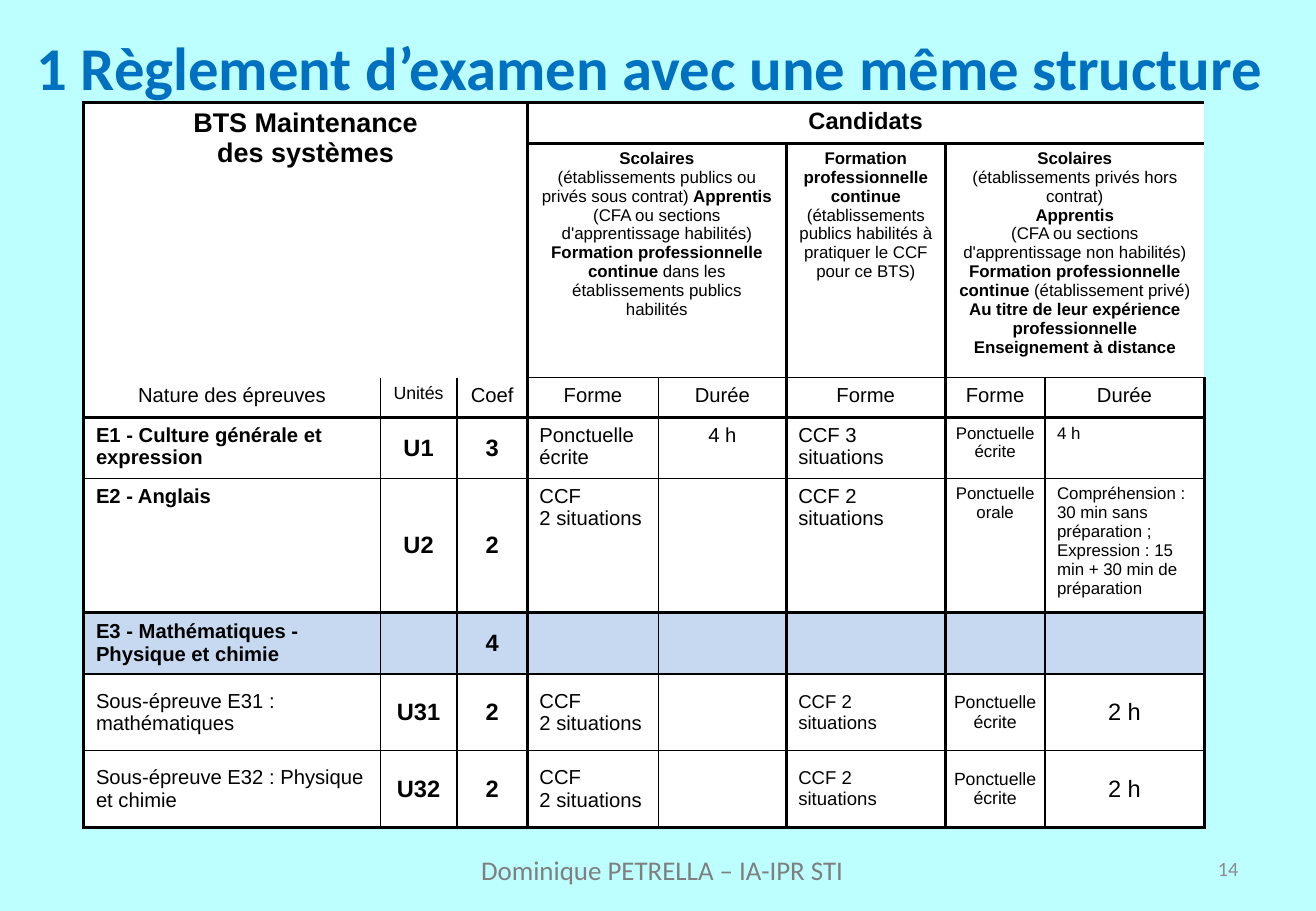
from lxml.etree import SubElement
from pptx import Presentation
from pptx.dml.color import RGBColor
from pptx.enum.text import MSO_ANCHOR as Anchor, MSO_AUTO_SIZE as AutoSize, PP_ALIGN as Align
from pptx.oxml.ns import qn
from pptx.util import Pt

PX = 9144
WHITE, BLUE_ROW, BLACK = "FFFFFF", "C6D9F1", "000000"
ALIGNS = {"l": Align.LEFT, "c": Align.CENTER, "r": Align.RIGHT}
ANCHORS = {"t": Anchor.TOP, "m": Anchor.MIDDLE}

COLUMNS = [244, 63, 58, 108, 105, 131, 82, 131]
ROWS = [34, 193, 33, 50, 110, 51, 63, 63]
MERGES = [(0, 0, 1, 2), (0, 3, 0, 7), (1, 3, 1, 4), (1, 6, 1, 7)]
THICK_COLUMN_EDGES = {0, 3, 5, 6, 8}
THICK_ROW_EDGES = {0, 1, 3, 5, 8}
HIGHLIGHT_ROW = 5
NARROW_COLUMN = 6

SCHOOLS = ("*Scolaires*\n(établissements publics ou privés sous contrat) *Apprentis*\n"
           "(CFA ou sections d'apprentissage habilités) *Formation professionnelle continue *"
           "dans les établissements publics habilités")
TRAINING = ("*Formation*\n*professionnelle continue*\n"
            "(établissements publics habilités à pratiquer le CCF pour ce BTS)")
PRIVATE = ("*Scolaires*\n(établissements privés hors contrat)\n*Apprentis*\n"
           "(CFA ou sections d'apprentissage non habilités) *Formation professionnelle continue *"
           "(établissement privé) *Au titre de leur expérience professionnelle "
           "Enseignement à distance*")
ORAL = ("Compréhension :\n30 min sans préparation ; Expression : 15 min "
        "+ 30 min de préparation")
TWO_CCF = "CCF\n2 situations"


def sub_exam(name, unit):
    """Return the cells of one E3 sub-exam."""
    return [(name, 12, "l", "m"), (unit, 14, "c", "m"), ("*2*", 14, "c", "m"),
            (TWO_CCF, 12, "l", "m"), None, ("CCF 2 situations", 11, "l", "m"),
            ("Ponctuelle écrite", 10.5, "c", "m"), ("2 h", 14, "c", "m")]


EXAMS = [
    [("*BTS Maintenance*\n*des systèmes*", 16, "c", "t"), None, None,
     ("*Candidats*", 14, "c", "t"), None, None, None, None],
    [None, None, None, (SCHOOLS, 10, "c", "t"), None, (TRAINING, 10, "c", "t"),
     (PRIVATE, 10, "c", "t"), None],
    [(heading, 10.5 if heading == "Unités" else 12, "c", "t") for heading in
     ("Nature des épreuves", "Unités", "Coef", "Forme", "Durée", "Forme", "Forme", "Durée")],
    [("*E1 - Culture générale et expression*", 12, "l", "t"), ("*U1*", 14, "c", "m"),
     ("*3*", 14, "c", "m"), ("Ponctuelle écrite", 12, "l", "t"), ("4 h", 12, "c", "t"),
     ("CCF 3 situations", 12, "l", "t"), ("Ponctuelle écrite", 10, "c", "t"),
     ("4 h", 10, "l", "t")],
    [("*E2 - Anglais*", 12, "l", "t"), ("*U2*", 14, "c", "m"), ("*2*", 14, "c", "m"),
     (TWO_CCF, 12, "l", "t"), None, ("CCF 2 situations", 12, "l", "t"),
     ("Ponctuelle orale", 10, "c", "t"), (ORAL, 10, "l", "t")],
    [("*E3 - Mathématiques - Physique et chimie*", 12, "l", "m"), None,
     ("*4*", 14, "c", "m"), None, None, None, None, None],
    sub_exam("Sous-épreuve E31 :\nmathématiques", "*U31*"),
    sub_exam("Sous-épreuve E32 : Physique et chimie", "*U32*"),
]


def paint(color, value):
    """Set a colour format from a hex string."""
    color.rgb = RGBColor.from_string(value)


def write(frame, text, size=12, align="l", color=BLACK, font="Arial"):
    """Write lines of text, with bold parts between asterisks."""
    for index, line in enumerate(text.split("\n")):
        paragraph = frame.add_paragraph() if index else frame.paragraphs[0]
        paragraph.alignment = ALIGNS[align]
        for order, part in enumerate(line.split("*")):
            if part:
                run = paragraph.add_run()
                run.text = part
                run.font.size, run.font.name = Pt(size), font
                run.font.bold = order % 2 == 1
                paint(run.font.color, color)


def place(box):
    """Turn a px box into EMU lengths."""
    return [length * PX for length in box]


def add_title(slide, box, text):
    """Move and format the title placeholder."""
    title = slide.shapes.title
    title.left, title.top, title.width, title.height = place(box)
    frame = title.text_frame
    frame.auto_size, frame.word_wrap = AutoSize.NONE, True
    frame.margin_top, frame.margin_bottom = 21 * PX, 5 * PX
    frame.vertical_anchor = Anchor.MIDDLE
    write(frame, text, size=36, align="c", color="0070C0", font="Calibri")


def add_label(slide, box, text, anchor="t", **style):
    """Add one line of the page foot."""
    frame = slide.shapes.add_textbox(*place(box)).text_frame
    frame.word_wrap = True
    frame.vertical_anchor = ANCHORS[anchor]
    write(frame, text, font="Calibri", **style)


def region(row, column):
    """Return the first and last row and column of the merged area around a cell."""
    for top, left, bottom, right in MERGES:
        if top <= row <= bottom and left <= column <= right:
            return top, left, bottom, right
    return row, column, row, column


def rule_cell(cell, row, column):
    """Draw the cell edges that bound its merged area."""
    top, left, bottom, right = region(row, column)
    edges = [("L", column == left, column in THICK_COLUMN_EDGES),
             ("R", column == right, column + 1 in THICK_COLUMN_EDGES),
             ("T", row == top, row in THICK_ROW_EDGES),
             ("B", row == bottom, row + 1 in THICK_ROW_EDGES)]
    properties = cell._tc.get_or_add_tcPr()
    for side, outer, thick in edges:
        line = SubElement(properties, qn(f"a:ln{side}"), w=str(Pt(2 if thick else 1)))
        if outer:
            fill = SubElement(line, qn("a:solidFill"))
            SubElement(fill, qn("a:srgbClr"), val=BLACK)
        else:
            SubElement(line, qn("a:noFill"))


def add_exam_table(slide, box):
    """Add the table of exams by kind of candidate."""
    table = slide.shapes.add_table(len(ROWS), len(COLUMNS), *place(box)).table
    table.first_row = table.horz_banding = False
    for column, width in zip(table.columns, COLUMNS):
        column.width = width * PX
    for row, height in zip(table.rows, ROWS):
        row.height = height * PX
    for top, left, bottom, right in MERGES:
        table.cell(top, left).merge(table.cell(bottom, right))
    for row, entries in enumerate(EXAMS):
        for column, entry in enumerate(entries):
            cell = table.cell(row, column)
            rule_cell(cell, row, column)
            cell.fill.solid()
            paint(cell.fill.fore_color, BLUE_ROW if row == HIGHLIGHT_ROW else WHITE)
            if column == NARROW_COLUMN and row > 2:
                cell.margin_left = cell.margin_right = 4 * PX
            if entry:
                text, size, align, anchor = entry
                cell.vertical_anchor = ANCHORS[anchor]
                write(cell.text_frame, text, size=size, align=align)


def main():
    """Build the exam rules slide."""
    deck = Presentation()
    deck.slide_width, deck.slide_height = 1083 * PX, 750 * PX
    slide = deck.slides.add_slide(deck.slide_layouts[5])
    slide.background.fill.solid()
    paint(slide.background.fill.fore_color, "BDFFFF")
    add_title(slide, (0, 3, 1069, 87), "*1 Règlement d’examen avec une même structure*")
    add_exam_table(slide, (69, 84, sum(COLUMNS), sum(ROWS)))
    add_label(slide, (175, 698, 740, 37), "Dominique PETRELLA – IA-IPR STI",
              size=16, align="c", color="7F7F7F")
    add_label(slide, (776, 695, 253, 40), "14", anchor="m",
              size=12, align="r", color="8C8C8C")
    deck.save("out.pptx")


if __name__ == "__main__":
    main()
